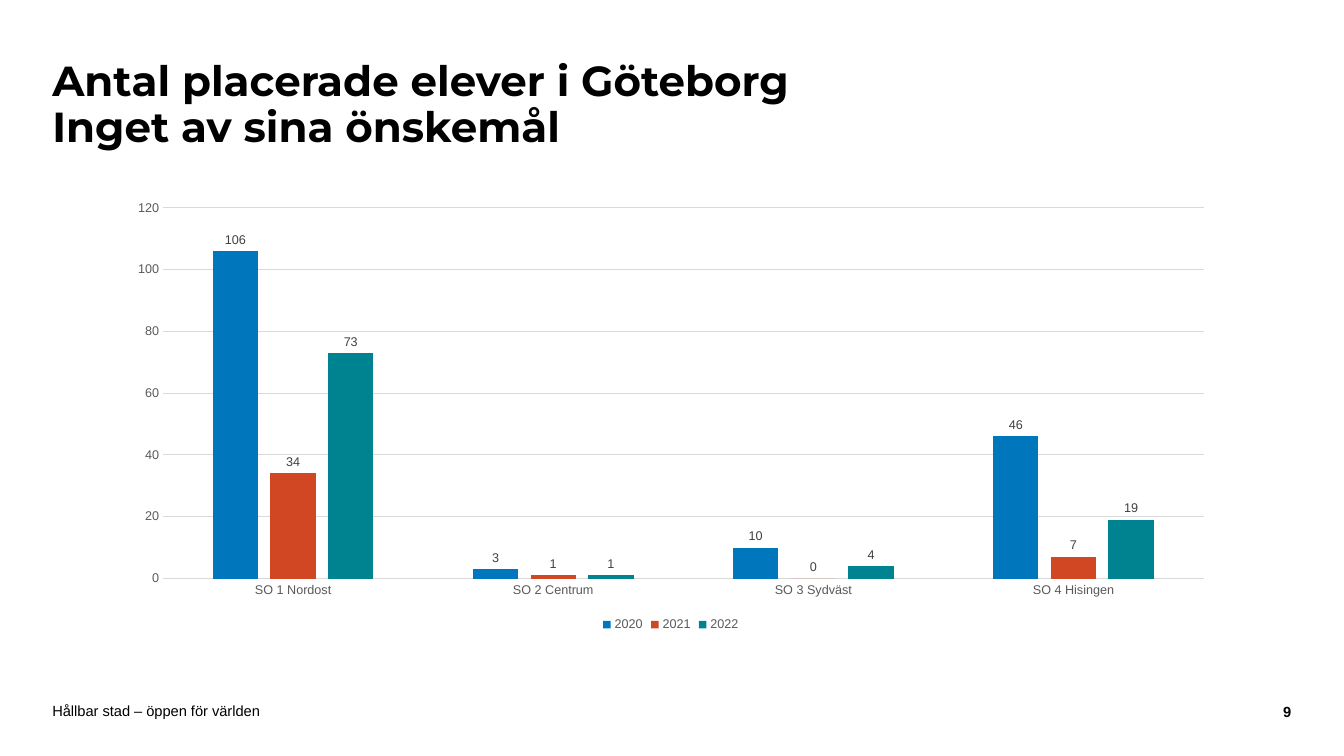
from pptx import Presentation
from pptx.chart.data import CategoryChartData
from pptx.dml.color import RGBColor
from pptx.enum.chart import XL_CHART_TYPE, XL_LABEL_POSITION, XL_LEGEND_POSITION, XL_TICK_MARK
from pptx.enum.text import MSO_ANCHOR, PP_ALIGN
from pptx.util import Cm, Pt

COLUMNS = XL_CHART_TYPE.COLUMN_CLUSTERED
OUTSIDE_END = XL_LABEL_POSITION.OUTSIDE_END
BOTTOM = XL_LEGEND_POSITION.BOTTOM
NO_TICKS = XL_TICK_MARK.NONE
MIDDLE = MSO_ANCHOR.MIDDLE
LEFT, RIGHT = PP_ALIGN.LEFT, PP_ALIGN.RIGHT

THEME = {
    "heading_font": "Montserrat", "body_font": "Arial",
    "title_size": 30, "footer_size": 10.5, "chart_size": 9,
    "text": "000000", "axis_text": "595959", "label_text": "404040", "grid": "D9D9D9",
    "grid_width": 0.75,
}
SLIDE_SIZE = (33.87, 19.05)
AREAS = ["SO 1 Nordost", "SO 2 Centrum", "SO 3 Sydväst", "SO 4 Hisingen"]
YEARS = [
    ("2020", "0077BC", (106, 3, 10, 46)),
    ("2021", "D24723", (34, 1, 0, 7)),
    ("2022", "008391", (73, 1, 4, 19)),
]
CHART_BOX = (2.92, 4.83, 27.97, 11.2)
TITLE_FORMAT = {"name": THEME["heading_font"], "size": Pt(THEME["title_size"]), "bold": True}
FOOTER_FORMAT = {"name": THEME["body_font"], "size": Pt(THEME["footer_size"]), "bold": False}
CHART_FORMAT = {"name": THEME["body_font"], "size": Pt(THEME["chart_size"]), "bold": False}
# text, box, vertical inset, alignment, line spacing, font format
TEXTS = [
    ("Antal placerade elever i Göteborg\nInget av sina önskemål",
     (1.32, 1.07, 25.48, 3.2), 0.13, LEFT, 0.9, TITLE_FORMAT),
    ("Hållbar stad – öppen för världen",
     (1.32, 17.7, 24, 0.41), 0, LEFT, 1.0, FOOTER_FORMAT),
    ("9", (30.91, 17.73, 1.63, 0.41), 0, RIGHT, 1.0, {**FOOTER_FORMAT, "bold": True}),
]


def set_attributes(target, values):
    for name, value in values.items():
        setattr(target, name, value)


def set_font(font, values, color):
    set_attributes(font, values)
    font.color.rgb = RGBColor.from_string(color)


def set_hairline(line):
    line.width = Pt(THEME["grid_width"])
    line.color.rgb = RGBColor.from_string(THEME["grid"])


def add_text(slide, text, box, inset, alignment, spacing, font_format):
    frame = slide.shapes.add_textbox(*map(Cm, box)).text_frame
    set_attributes(frame, {
        "word_wrap": True, "vertical_anchor": MIDDLE,
        "margin_left": 0, "margin_right": 0,
        "margin_top": Cm(inset), "margin_bottom": Cm(inset),
    })
    paragraph = frame.paragraphs[0]
    paragraph.text = text
    set_attributes(paragraph, {"alignment": alignment, "line_spacing": spacing})
    for run in paragraph.runs:
        set_font(run.font, font_format, THEME["text"])


def add_placement_chart(slide):
    data = CategoryChartData()
    data.categories = AREAS
    for year, _, values in YEARS:
        data.add_series(year, values)
    chart = slide.shapes.add_chart(COLUMNS, *map(Cm, CHART_BOX), data).chart
    set_attributes(chart, {"has_title": False, "has_legend": True})
    set_font(chart.font, CHART_FORMAT, THEME["axis_text"])
    set_attributes(chart.legend, {"position": BOTTOM, "include_in_layout": False})
    set_font(chart.legend.font, CHART_FORMAT, THEME["axis_text"])

    for axis in (chart.category_axis, chart.value_axis):
        set_attributes(axis, {"major_tick_mark": NO_TICKS, "minor_tick_mark": NO_TICKS})
        set_font(axis.tick_labels.font, CHART_FORMAT, THEME["axis_text"])
    set_hairline(chart.category_axis.format.line)
    set_attributes(chart.value_axis, {
        "minimum_scale": 0, "maximum_scale": 120, "major_unit": 20,
        "has_major_gridlines": True,
    })
    chart.value_axis.format.line.fill.background()
    set_hairline(chart.value_axis.major_gridlines.format.line)

    plot = chart.plots[0]
    set_attributes(plot, {"gap_width": 219, "overlap": -27, "vary_by_categories": False})
    for series, (_, color, _) in zip(plot.series, YEARS):
        series.format.fill.solid()
        series.format.fill.fore_color.rgb = RGBColor.from_string(color)
        labels = series.data_labels
        set_attributes(labels, {"show_value": True, "position": OUTSIDE_END})
        set_font(labels.font, CHART_FORMAT, THEME["label_text"])


def main():
    presentation = Presentation()
    presentation.slide_width, presentation.slide_height = map(Cm, SLIDE_SIZE)
    slide = presentation.slides.add_slide(presentation.slide_layouts[6])
    for text in TEXTS:
        add_text(slide, *text)
    add_placement_chart(slide)
    presentation.save("out.pptx")


if __name__ == "__main__":
    main()
